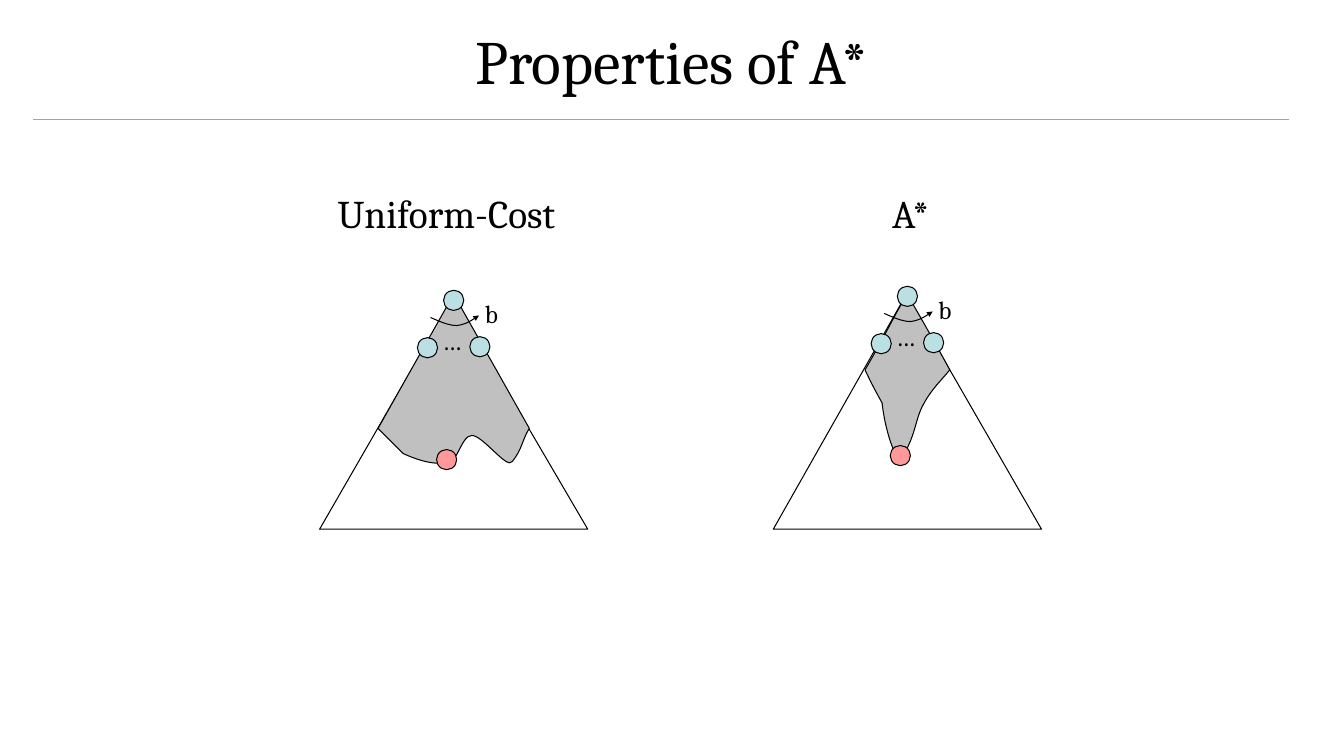
from lxml import etree
from pptx import Presentation
from pptx import util as u
from pptx.dml.color import RGBColor
from pptx.enum import shapes, text
from pptx.oxml.ns import qn

PX = 9144  # EMU per px, 100 px to the inch
FONT = "Cambria"
BLACK, GREY, BLUE, RED, RULE = "000000", "C0C0C0", "BBE0E3", "FF9999", "9C9CDF"

# Outlines list a start point, then lines (x, y) or Bézier curves (x1, y1, x2, y2, x, y).
TREES = [
    dict(
        label="Uniform-Cost", label_box=(325, 183, 292, 57), shift=(0, 0),
        triangle=[(317, 525), (583, 525), (449, 296), (317, 525)],
        explored=[(450, 292), (375, 425), (400, 450),
                  (400, 450, 429, 464, 442, 458), (453, 464, 457, 432, 468, 432),
                  (479, 432, 503, 466, 508, 458), (518, 446, 518, 436, 525, 425),
                  (450, 292)],
    ),
    dict(
        label="A*", label_box=(875, 183, 67, 57), shift=(450, -4),
        triangle=[(767, 525), (1033, 525), (899, 292), (767, 525)],
        explored=[(900, 292), (885, 316, 884, 322, 858, 367),
                  (866, 384, 868, 387, 875, 400), (875, 400, 878, 434, 892, 458),
                  (909, 433, 907, 417, 916, 401), (924, 386, 934, 377, 942, 367),
                  (917, 321, 910, 310, 900, 292)],
    ),
]
# Parts shared by both trees, moved by each tree's shift
NODE = 20
CHILDREN = [(414, 335), (466, 334)]
GOAL, ROOT = (433, 446), (440, 288)
DOTS_BOX, BRANCH_BOX = (429, 318, 30, 40), (471, 291, 33, 40)
BRANCH_ARC = [(427, 315), (436, 319, 445, 323, 453, 323), (461, 322, 468, 318, 475, 313)]


def color(value):
    return RGBColor.from_string(value)


def moved(part, shift):
    """Shift the x, y pairs of one outline step."""
    return tuple(v + shift[i % 2] for i, v in enumerate(part))


def style(sp, fill=None):
    sp.shadow.inherit = False
    if fill:
        sp.fill.solid()
        sp.fill.fore_color.rgb = color(fill)
    else:
        sp.fill.background()
    sp.line.color.rgb = color(BLACK)
    sp.line.width = u.Pt(0.75)


def add_outline(s, outline, fill=None, close=True):
    """Draw every point as a line end, then merge each curve's three lines into one Bézier."""
    points = [(part[i] * PX, part[i + 1] * PX)
              for part in outline for i in range(0, len(part), 2)]
    builder = s.shapes.build_freeform(*points[0], scale=1.0)
    builder.add_line_segments(points[1:], close=close)
    sp = builder.convert_to_shape()
    style(sp, fill)
    lines = iter(list(sp._element.iter(qn("a:lnTo"))))
    for part in outline[1:]:
        segment = next(lines)
        if len(part) == 6:
            segment.addprevious(curve := etree.Element(qn("a:cubicBezTo")))
            for line in (segment, next(lines), next(lines)):
                curve.append(line[0])
                line.getparent().remove(line)
    return sp


def add_node(s, corner, shift, fill):
    x, y = moved(corner, shift)
    sp = s.shapes.add_shape(shapes.MSO_SHAPE.OVAL, x * PX, y * PX, NODE * PX, NODE * PX)
    style(sp, fill)


def write(tf, words, size):
    tf.word_wrap = True
    r = tf.paragraphs[0].add_run()
    r.text = words
    r.font.name, r.font.size = FONT, u.Pt(size)
    r.font.color.rgb = color(BLACK)


def add_label(s, box, words, size, shift=(0, 0)):
    place = moved(box[:2], shift) + box[2:]
    tf = s.shapes.add_textbox(*(v * PX for v in place)).text_frame
    tf.auto_size = text.MSO_AUTO_SIZE.SHAPE_TO_FIT_TEXT
    write(tf, words, size)


def add_tree(s, tree):
    shift = tree["shift"]
    add_outline(s, tree["triangle"])
    add_outline(s, tree["explored"], GREY)
    for child in CHILDREN:
        add_node(s, child, shift, BLUE)
    add_label(s, DOTS_BOX, "…", 18, shift)
    arc = add_outline(s, [moved(part, shift) for part in BRANCH_ARC], close=False)
    etree.SubElement(arc.line._get_or_add_ln(), qn("a:tailEnd"),
                     type="triangle", w="sm", len="sm")
    add_label(s, BRANCH_BOX, "b", 18, shift)
    add_node(s, GOAL, shift, RED)
    add_node(s, ROOT, shift, BLUE)
    add_label(s, tree["label_box"], tree["label"], 28)


def main():
    prs = Presentation()
    prs.slide_width, prs.slide_height = 1333 * PX, 750 * PX
    s = prs.slides.add_slide(prs.slide_layouts[5])

    title = s.shapes.title
    title.left, title.top, title.width, title.height = 0, -3 * PX, 1333 * PX, 125 * PX
    tf = title.text_frame
    tf.auto_size = text.MSO_AUTO_SIZE.NONE
    tf.vertical_anchor = text.MSO_ANCHOR.MIDDLE
    tf.paragraphs[0].alignment = text.PP_ALIGN.CENTER
    write(tf, "Properties of A*", 44)

    rule = s.shapes.add_connector(shapes.MSO_CONNECTOR.STRAIGHT,
                                  33 * PX, 119 * PX, 1278 * PX, 119 * PX)
    rule.line.color.rgb = color(RULE)
    rule.line.width = u.Pt(0.75)
    etree.SubElement(rule._element.spPr, qn("a:effectLst"))

    for tree in TREES:
        add_tree(s, tree)
    prs.save("out.pptx")


if __name__ == "__main__":
    main()
